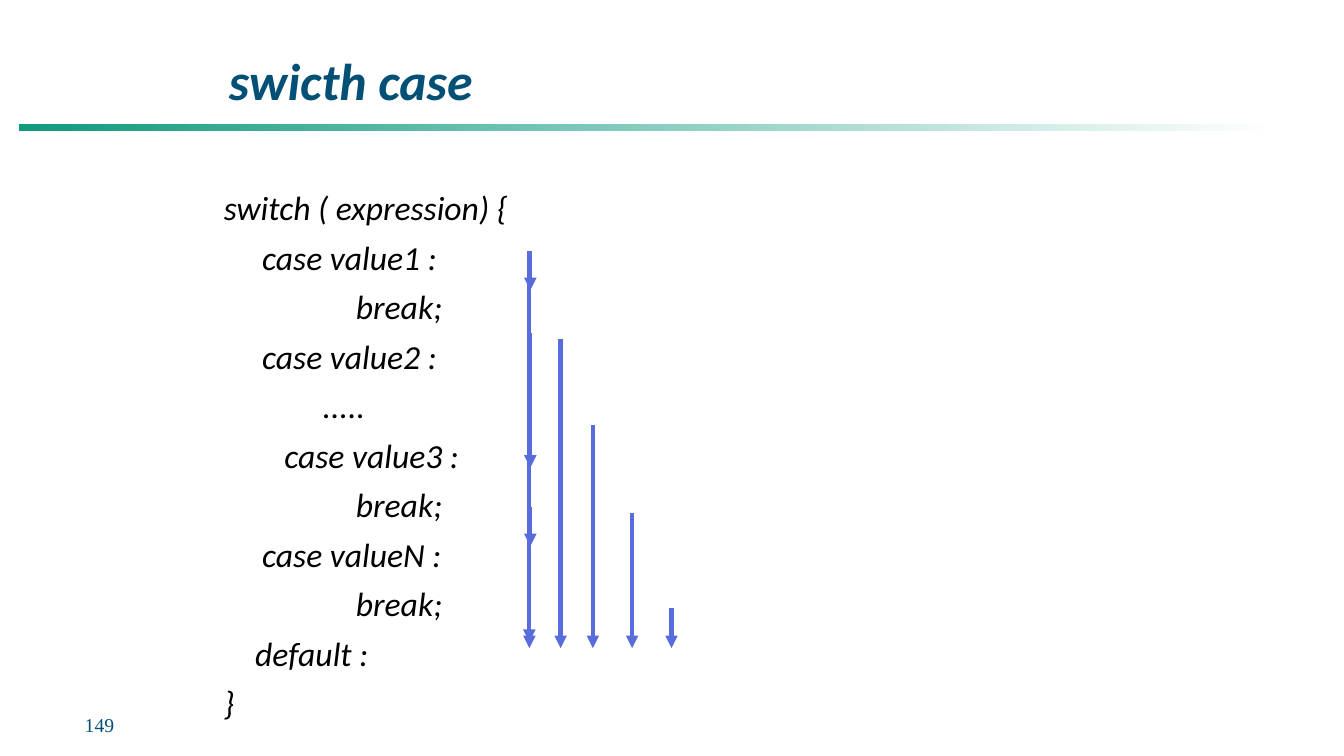
"""Build the slide on the switch case statement with its flow arrows."""
import dataclasses

import pptx
import pptx.dml.color
import pptx.enum.dml
import pptx.enum.shapes
import pptx.enum.text
import pptx.oxml
import pptx.oxml.ns
import pptx.util

Inches = pptx.util.Inches
Pt = pptx.util.Pt
ANCHOR = pptx.enum.text.MSO_ANCHOR
NAVY = "035077"
BLUE = "586CDC"


@dataclasses.dataclass
class Line:
    text: str
    indent: float = 0


@dataclasses.dataclass
class Arrow:
    x: float
    top: float
    end: float


@dataclasses.dataclass
class Style:
    font: str
    size: float
    color: str
    bold: bool = False
    italic: bool = False


CASE, BREAK = 0.38, 1.31
CODE = [
    Line("switch ( expression) {"),
    Line("case value1 :", CASE),
    Line("break;", BREAK),
    Line("case value2 :", CASE),
    Line(".....", 0.98),
    Line("case value3 :", 0.6),
    Line("break;", BREAK),
    Line("case valueN :", CASE),
    Line("break;", BREAK),
    Line("default :", 0.31),
    Line("}"),
]
FLOOR = 6.43
EXITS = [
    Arrow(5.25, 2.49, FLOOR),
    Arrow(5.56, 3.36, FLOOR),
    Arrow(5.88, 4.22, FLOOR),
    Arrow(6.27, 5.09, FLOOR),
    Arrow(6.66, 6.03, FLOOR),
]
STEPS = [
    Arrow(5.26, 3.3, 4.64),
    Arrow(5.26, 2.49, 2.88),
    Arrow(5.26, 5.03, 5.42),
    Arrow(5.25, 5.97, 6.37),
]


def paint(color, value: str) -> None:
    color.rgb = pptx.dml.color.RGBColor.from_string(value)


def place(shape, left: float, top: float, width: float, height: float) -> None:
    shape.left, shape.top = Inches(left), Inches(top)
    shape.width, shape.height = Inches(width), Inches(height)


def setup(frame, anchor, left: float = 0.1) -> None:
    frame.word_wrap = True
    frame.auto_size = pptx.enum.text.MSO_AUTO_SIZE.NONE
    frame.vertical_anchor = anchor
    frame.margin_left, frame.margin_right = Inches(left), Inches(0.1)
    frame.margin_top = frame.margin_bottom = Inches(0.05)


def format_runs(para, style: Style) -> None:
    para.alignment = pptx.enum.text.PP_ALIGN.LEFT
    for run in para.runs:
        font = run.font
        font.name, font.size = style.font, Pt(style.size)
        font.bold, font.italic = style.bold, style.italic
        paint(font.color, style.color)


def add_rule(slide) -> None:
    rule = slide.shapes.add_shape(
        pptx.enum.shapes.MSO_SHAPE.RECTANGLE,
        Inches(0.19), Inches(1.23), Inches(12.46), Inches(0.07))
    rule.shadow.inherit = False
    rule.line.fill.background()
    rule.fill.gradient()
    rule.fill.gradient_angle = 0
    for stop, color in zip(rule.fill.gradient_stops, ["119A7E", "FFFFFF"]):
        paint(stop.color, color)


def add_title(slide) -> None:
    title = slide.shapes.title
    place(title, 2.17, 0.5, 8.95, 0.67)
    setup(title.text_frame, ANCHOR.MIDDLE)
    title.text_frame.text = "swicth case"
    para = title.text_frame.paragraphs[0]
    para.line_spacing = 0.88
    format_runs(para, Style("Calibri", 37, NAVY, True, True))


def add_code(slide) -> None:
    body = slide.placeholders[1]
    place(body, 2.12, 1.86, 8.99, 5.14)
    frame = body.text_frame
    setup(frame, ANCHOR.TOP)
    frame.text = "\n".join(line.text for line in CODE)
    style = Style("Calibri", 24, "000000", italic=True)
    for row, (para, line) in enumerate(zip(frame.paragraphs, CODE)):
        props = para._p.get_or_add_pPr()
        props.set("marL", str(Inches(line.indent)))
        props.set("indent", "0")
        pptx.oxml.ns.qn("a:buNone")
        props.append(pptx.oxml.parse_xml(
            f"<a:buNone {pptx.oxml.ns.nsdecls('a')}/>"))
        para.line_spacing = 0.88
        para.space_before = Pt(10 if row else 0)
        format_runs(para, style)


def add_number(slide) -> None:
    box = slide.shapes.add_textbox(
        Inches(0.84), Inches(7.01), Inches(0.41), Inches(0.35))
    setup(box.text_frame, ANCHOR.MIDDLE, left=0)
    box.text_frame.text = "149"
    format_runs(box.text_frame.paragraphs[0], Style("Times New Roman", 14, NAVY))


def add_arrows(slide, arrows: list[Arrow]) -> None:
    group = slide.shapes.add_group_shape()
    space = pptx.oxml.ns.nsdecls("a")
    for arrow in arrows:
        link = group.shapes.add_connector(
            pptx.enum.shapes.MSO_CONNECTOR.STRAIGHT,
            Inches(arrow.x), Inches(arrow.top), Inches(arrow.x), Inches(arrow.end))
        link.line.width = Pt(3)
        link.line.fill.solid()
        paint(link.line.color, BLUE)
        link.line._get_or_add_ln().append(
            pptx.oxml.parse_xml(f'<a:tailEnd {space} type="triangle"/>'))
        link._element.spPr.append(pptx.oxml.parse_xml(f"<a:effectLst {space}/>"))


def main() -> None:
    deck = pptx.Presentation()
    deck.slide_width, deck.slide_height = Inches(13.33), Inches(7.5)
    slide = deck.slides.add_slide(deck.slide_layouts[1])
    add_rule(slide)
    add_title(slide)
    add_code(slide)
    add_number(slide)
    for arrows in (EXITS, STEPS):
        add_arrows(slide, arrows)
    deck.save("out.pptx")


if __name__ == "__main__":
    main()
